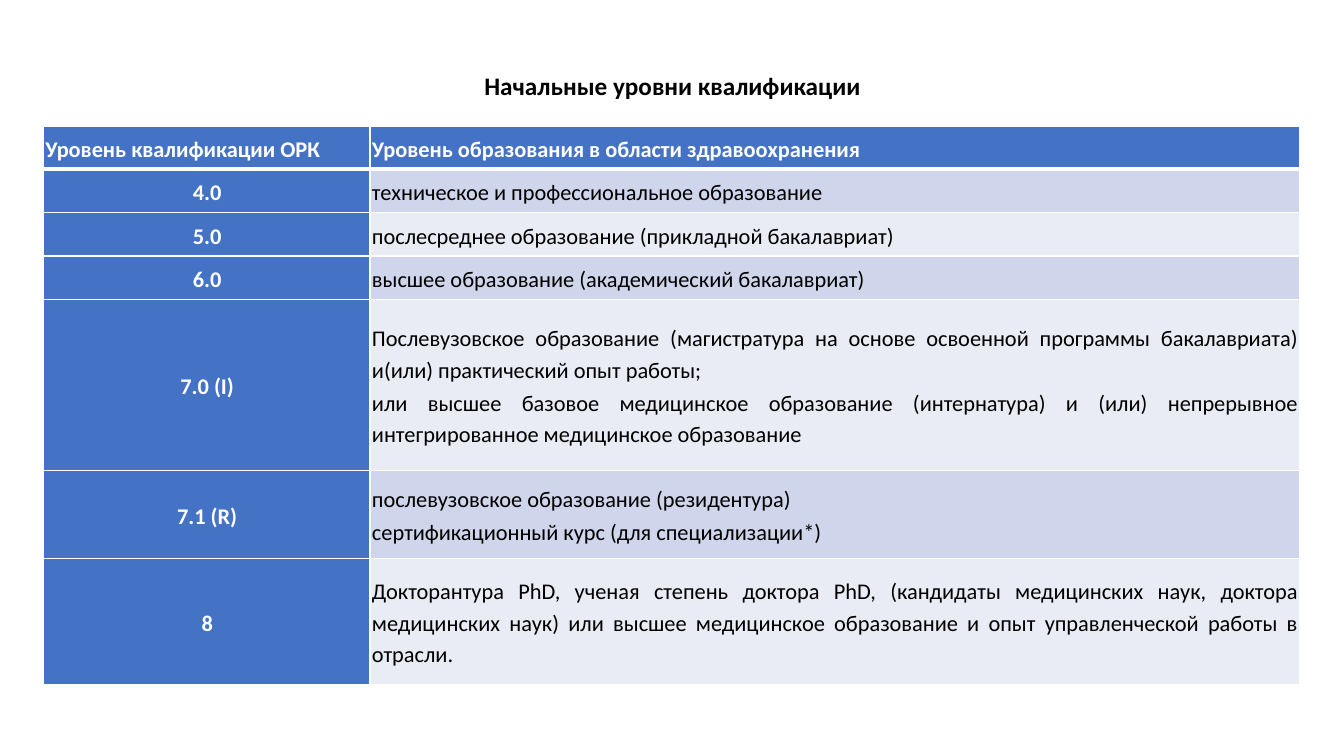
from lxml.etree import SubElement
from pptx import Presentation
from pptx.dml.color import RGBColor
from pptx.enum.text import MSO_ANCHOR as Anchor, PP_ALIGN as Align
from pptx.oxml.ns import qn
from pptx.util import Emu, Pt

PX = 9144
COLORS = {"text": "000000", "white": "FFFFFF", "head": "4472C4",
          "odd": "CFD5EA", "even": "E9EBF5"}
HEADINGS = ("Уровень квалификации ОРК", "Уровень образования в области здравоохранения")
LEVELS = [
    ("4.0", "техническое и профессиональное образование"),
    ("5.0", "послесреднее образование (прикладной бакалавриат)"),
    ("6.0", "высшее образование (академический бакалавриат)"),
    ("7.0 (I)", "Послевузовское образование (магистратура на основе освоенной программы "
                "бакалавриата) и(или) практический опыт работы;\n"
                "или высшее базовое медицинское образование (интернатура) и (или) "
                "непрерывное интегрированное медицинское образование"),
    ("7.1 (R)", "послевузовское образование (резидентура)\n"
                "сертификационный курс (для специализации*)"),
    ("8", "Докторантура PhD, ученая степень доктора PhD, (кандидаты медицинских наук, "
          "доктора медицинских наук) или высшее медицинское образование и опыт "
          "управленческой работы в отрасли."),
]
COLUMN_WIDTHS = (324, 922)
ROW_HEIGHTS = (43, 43, 43, 43, 170, 87, 125)


def px(*lengths):
    return [Emu(length * PX) for length in lengths]


class QualificationSlide:
    font_name = "Calibri"

    def __init__(self, deck):
        self.slide = deck.slides.add_slide(deck.slide_layouts[5])

    def style_paragraph(self, paragraph, size, color, bold, align, spacing):
        paragraph.alignment = align
        paragraph.line_spacing = spacing
        for run in paragraph.runs:
            run.font.name = self.font_name
            run.font.size = Pt(size)
            run.font.bold = bold
            run.font.color.rgb = RGBColor.from_string(COLORS[color])

    def title(self, text, *box):
        heading = self.slide.shapes.title
        heading.left, heading.top, heading.width, heading.height = px(*box)
        heading.text_frame.text = text
        heading.text_frame.vertical_anchor = Anchor.MIDDLE
        self.style_paragraph(heading.text_frame.paragraphs[0], 18, "text", True, Align.CENTER, 0.9)

    def borders(self, cell, **widths):
        properties = cell._tc.get_or_add_tcPr()
        for side in ("L", "R", "T", "B"):
            line = SubElement(properties, qn(f"a:ln{side}"), w=str(Pt(widths.get(side, 1))))
            fill = SubElement(line, qn("a:solidFill"))
            SubElement(fill, qn("a:srgbClr"), val=COLORS["white"])

    def cell(self, cell, text, fill, color, bold, align, **border_widths):
        cell.text_frame.text = text
        cell.vertical_anchor = Anchor.MIDDLE
        cell.margin_left, cell.margin_top, cell.margin_right, cell.margin_bottom = px(1, 1, 1, 1)
        self.borders(cell, **border_widths)
        cell.fill.solid()
        cell.fill.fore_color.rgb = RGBColor.from_string(COLORS[fill])
        for paragraph in cell.text_frame.paragraphs:
            paragraph._p.get_or_add_pPr().set("marL", str(PX))
            self.style_paragraph(paragraph, 16, color, bold, align, 1.15)
            paragraph.space_after = Pt(1)

    def level_table(self, left, top):
        box = px(left, top, sum(COLUMN_WIDTHS), sum(ROW_HEIGHTS))
        levels = self.slide.shapes.add_table(len(ROW_HEIGHTS), len(COLUMN_WIDTHS), *box).table
        for column, width in zip(levels.columns, px(*COLUMN_WIDTHS)):
            column.width = width
        for row, height in zip(levels.rows, px(*ROW_HEIGHTS)):
            row.height = height
        for index, heading in enumerate(HEADINGS):
            self.cell(levels.cell(0, index), heading, "head", "white", True, Align.JUSTIFY, B=3)
        for index, (level, education) in enumerate(LEVELS, 1):
            top_width = 3 if index == 1 else 1
            band = "odd" if index % 2 else "even"
            self.cell(levels.cell(index, 0), level, "head", "white", True, Align.CENTER, T=top_width)
            self.cell(levels.cell(index, 1), education, band, "text", False, Align.JUSTIFY, T=top_width)


def main():
    deck = Presentation()
    deck.slide_width, deck.slide_height = px(1333, 750)
    page = QualificationSlide(deck)
    page.title("Начальные уровни квалификации", 92, 40, 1150, 94)
    page.level_table(43, 125)
    deck.save("out.pptx")


if __name__ == "__main__":
    main()
